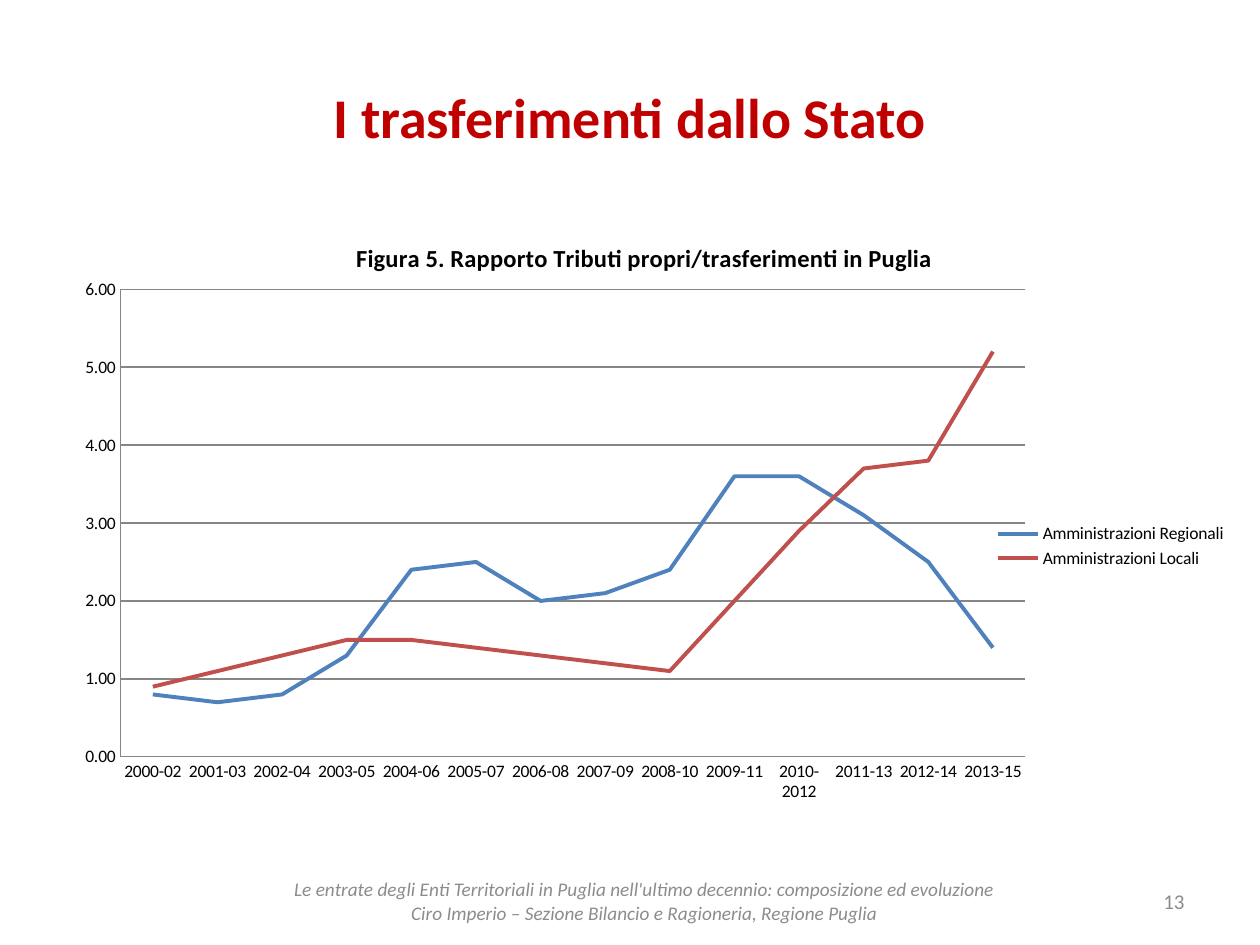
"""Build the slide on state transfers with its line chart of Puglia revenue ratios."""
from lxml import etree
from pptx import Presentation
from pptx.chart.data import CategoryChartData
from pptx.dml.color import RGBColor
from pptx.enum.chart import XL_CHART_TYPE, XL_LEGEND_POSITION, XL_TICK_MARK
from pptx.enum.text import MSO_ANCHOR, PP_ALIGN
from pptx.oxml.ns import qn
from pptx.util import Cm, Pt

LINE = XL_CHART_TYPE.LINE
RIGHT_LEGEND = XL_LEGEND_POSITION.RIGHT
NO_TICK = XL_TICK_MARK.NONE
MIDDLE = MSO_ANCHOR.MIDDLE
CENTER, RIGHT = PP_ALIGN.CENTER, PP_ALIGN.RIGHT


def style(font, size, color, bold=False, italic=False):
    """Apply the slide font with a size, hex colour and weight."""
    font.name = "Calibri"
    font.size = Pt(size)
    font.color.rgb = RGBColor.from_string(color)
    font.bold = bold
    font.italic = italic


prs = Presentation()
prs.slide_width, prs.slide_height = Cm(25.4), Cm(19.05)
s = prs.slides.add_slide(prs.slide_layouts[5])

title = s.shapes.title
title.left, title.top, title.width, title.height = Cm(1.27), Cm(0.76), Cm(22.86), Cm(3.18)
title.text_frame.text = "I trasferimenti dallo Stato"
title.text_frame.vertical_anchor = MIDDLE
p = title.text_frame.paragraphs[0]
p.alignment = CENTER
style(p.font, 32, "C00000", bold=True)

series = [
    ("Amministrazioni Regionali", "4F81BD",
     [0.8, 0.7, 0.8, 1.3, 2.4, 2.5, 2, 2.1, 2.4, 3.6, 3.6, 3.1, 2.5, 1.4]),
    ("Amministrazioni Locali", "C0504D",
     [0.9, 1.1, 1.3, 1.5, 1.5, 1.4, 1.3, 1.2, 1.1, 2, 2.9, 3.7, 3.8, 5.2]),
]
data = CategoryChartData(number_format="#,##0.00")
data.categories = ["2000-02", "2001-03", "2002-04", "2003-05", "2004-06", "2005-07", "2006-08",
                   "2007-09", "2008-10", "2009-11", "2010-2012", "2011-13", "2012-14", "2013-15"]
for name, color, values in series:
    data.add_series(name, values)
chart = s.shapes.add_chart(LINE, Cm(0.99), Cm(4.37), Cm(24), Cm(13.28), data).chart
style(chart.font, 10, "000000")

chart.has_title = True
chart.chart_title.include_in_layout = False
tf = chart.chart_title.text_frame
tf.text = "Figura 5. Rapporto Tributi propri/trasferimenti in Puglia"
style(tf.paragraphs[0].font, 14, "000000", bold=True)

chart.has_legend = True
chart.legend.position = RIGHT_LEGEND
chart.legend.include_in_layout = False

cat_axis, val_axis = chart.category_axis, chart.value_axis
val_axis.minimum_scale, val_axis.maximum_scale, val_axis.major_unit = 0, 6, 1
val_axis.has_major_gridlines = True
val_axis.tick_labels.number_format = "#,##0.00"
val_axis.tick_labels.number_format_is_linked = False
for axis in (cat_axis, val_axis):
    axis.major_tick_mark = axis.minor_tick_mark = NO_TICK
for line in (cat_axis.format.line, val_axis.format.line, val_axis.major_gridlines.format.line):
    line.color.rgb = RGBColor.from_string("868686")
    line.width = Pt(0.75)

plot = chart.plots[0]
plot.vary_by_categories = False
for ser, (name, color, values) in zip(plot.series, series):
    ser.smooth = False
    ser.format.line.color.rgb = RGBColor.from_string(color)
    ser.format.line.width = Pt(2.25)

plot_area = chart.element.find(".//" + qn("c:plotArea"))
for old in plot_area.findall(qn("c:layout")):
    plot_area.remove(old)
layout = etree.Element(qn("c:layout"))
manual = etree.SubElement(layout, qn("c:manualLayout"))
for tag, val in [("layoutTarget", "inner"), ("xMode", "edge"), ("yMode", "edge"),
                 ("x", "0.06"), ("y", "0.11"), ("w", "0.76"), ("h", "0.71")]:
    etree.SubElement(manual, qn("c:" + tag)).set("val", val)
plot_area.insert(0, layout)

footers = [
    (3.18, 19.63, CENTER, 11, True,
     ["Le entrate degli Enti Territoriali in Puglia nell'ultimo decennio: composizione ed evoluzione",
      "Ciro Imperio – Sezione Bilancio e Ragioneria, Regione Puglia"]),
    (18.21, 5.92, RIGHT, 12, False, ["13"]),
]
for left, width, align, size, italic, lines in footers:
    tf = s.shapes.add_textbox(Cm(left), Cm(17.65), Cm(width), Cm(1.02)).text_frame
    tf.word_wrap = True
    tf.vertical_anchor = MIDDLE
    tf.text = "\n".join(lines)
    for p in tf.paragraphs:
        p.alignment = align
        style(p.font, size, "8C8C8C", italic=italic)

prs.save("out.pptx")
